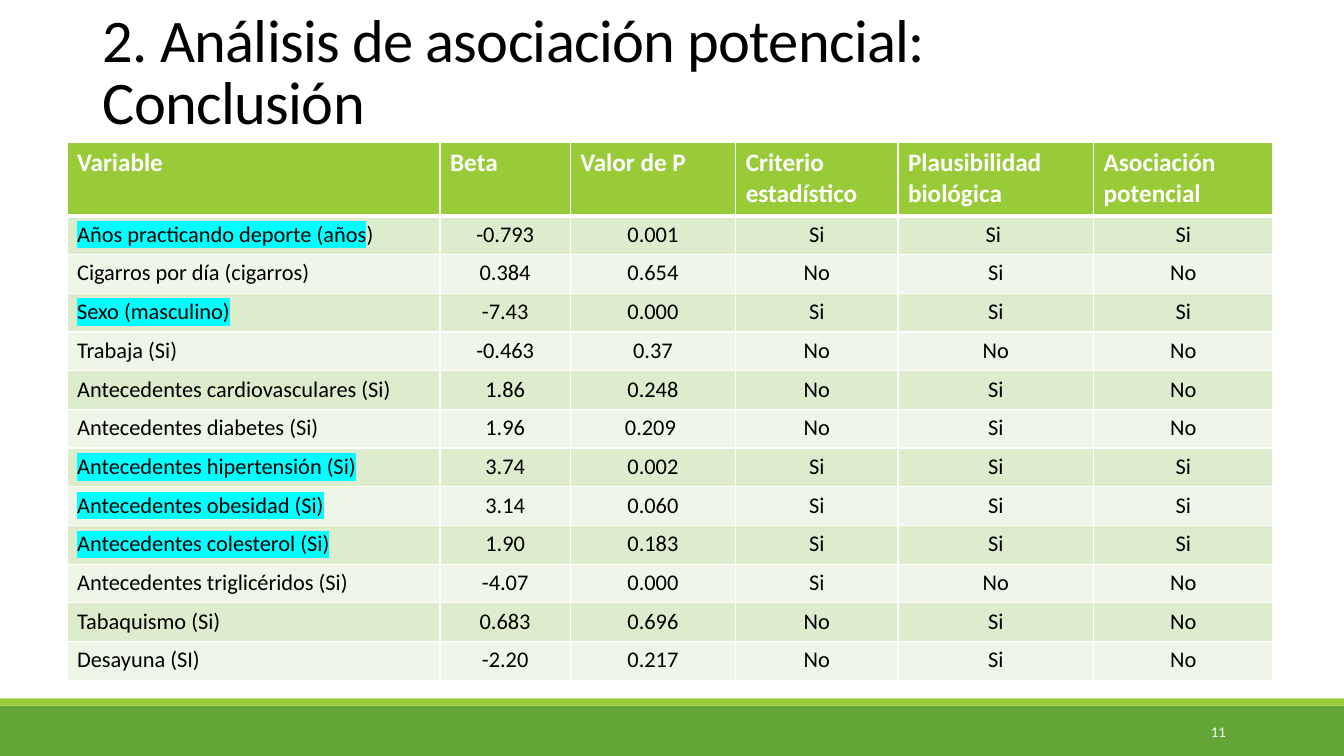
from lxml.etree import SubElement
from pptx import Presentation
from pptx.dml.color import RGBColor
from pptx.enum.shapes import MSO_SHAPE
from pptx.enum.text import MSO_ANCHOR, PP_ALIGN
from pptx.oxml import parse_xml
from pptx.oxml.ns import nsdecls, qn
from pptx.util import Cm, Pt

BLACK = RGBColor(0x00, 0x00, 0x00)
WHITE = RGBColor(0xFF, 0xFF, 0xFF)
DARK_GREEN = RGBColor(0x63, 0xA5, 0x37)
LIME = RGBColor(0x99, 0xCB, 0x38)
BAND_DARK = RGBColor(0xDE, 0xEC, 0xCE)
BAND_LIGHT = RGBColor(0xEF, 0xF6, 0xE8)
CYAN = RGBColor(0x00, 0xFF, 0xFF)

FONT = "Calibri"
SLIDE_WIDTH, SLIDE_HEIGHT = 33.87, 19.05
COLUMN_WIDTHS = [9.4, 3.28, 4.17, 4.09, 4.93, 4.52]
HEADER_HEIGHT, ROW_HEIGHT = 1.85, 0.975

HEADINGS = ["Variable", "Beta", "Valor de P", "Criterio estadístico",
            "Plausibilidad biológica", "Asociación potencial"]
VARIABLES = [
    ("Años practicando deporte (años|)", "-0.793", "0.001", "Si", "Si ", "Si"),
    ("Cigarros por día (cigarros)", "0.384", "0.654", "No", "Si", "No"),
    ("Sexo (masculino)", "-7.43", "0.000", "Si", "Si", "Si"),
    ("Trabaja (Si)", "-0.463", "0.37", "No", "No", "No"),
    ("Antecedentes cardiovasculares (Si)", "1.86", "0.248", "No", "Si", "No"),
    ("Antecedentes diabetes (Si)", "1.96", "0.209 ", "No", "Si", "No"),
    ("Antecedentes hipertensión (Si)", "3.74", "0.002", "Si", "Si", "Si"),
    ("Antecedentes obesidad (Si)", "3.14", "0.060", "Si", "Si", "Si"),
    ("Antecedentes colesterol (Si)", "1.90", "0.183", "Si", "Si", "Si"),
    ("Antecedentes triglicéridos (Si)", "-4.07", "0.000", "Si", "No", "No"),
    ("Tabaquismo (Si)", "0.683", "0.696", "No", "Si", "No"),
    ("Desayuna (SI)", "-2.20", "0.217", "No", "Si", "No"),
]


def write(paragraph, text, size=16, color=BLACK, bold=False,
          align=PP_ALIGN.LEFT, highlight=None, spacing=None):
    paragraph.alignment = align
    run = paragraph.add_run()
    run.text = text
    run.font.name = FONT
    run.font.size = Pt(size)
    run.font.bold = bold
    run.font.color.rgb = color
    properties = run.font._element
    if spacing is not None:
        properties.set("spc", str(int(spacing * 100)))
    if highlight is not None:
        properties.find(qn("a:solidFill")).addnext(parse_xml(
            f'<a:highlight {nsdecls("a")}><a:srgbClr val="{highlight}"/></a:highlight>'))


def add_bar(slide, top, height, color):
    bar = slide.shapes.add_shape(
        MSO_SHAPE.RECTANGLE, 0, Cm(top), Cm(SLIDE_WIDTH), Cm(height))
    bar.shadow.inherit = False
    bar.fill.solid()
    bar.fill.fore_color.rgb = color
    bar.line.fill.background()


def add_title(slide, text):
    title = slide.shapes.title
    title.left, title.top, title.width, title.height = (
        Cm(2.34), Cm(0.91), Cm(27.94), Cm(2.67))
    frame = title.text_frame
    frame.word_wrap = True
    frame.vertical_anchor = MSO_ANCHOR.BOTTOM
    frame.margin_right = Cm(1)
    heading = frame.paragraphs[0]
    heading.line_spacing = 0.85
    write(heading, text, size=43.2, spacing=-0.5)


def add_page_number(slide, number):
    frame = slide.shapes.add_textbox(
        Cm(27.51), Cm(17.93), Cm(3.63), Cm(1.02)).text_frame
    frame.word_wrap = True
    frame.vertical_anchor = MSO_ANCHOR.MIDDLE
    write(frame.paragraphs[0], number, size=10.5, color=WHITE,
          align=PP_ALIGN.RIGHT)


def style_cell(cell, fill, top=1, bottom=1):
    properties = cell._tc.get_or_add_tcPr()
    for side, width in (("L", 1), ("R", 1), ("T", top), ("B", bottom)):
        border = SubElement(properties, qn(f"a:ln{side}"), w=str(Pt(width)))
        color = SubElement(border, qn("a:solidFill"))
        SubElement(color, qn("a:srgbClr"), val=str(WHITE))
    cell.fill.solid()
    cell.fill.fore_color.rgb = fill


def fill_header(table):
    for column, heading in enumerate(HEADINGS):
        cell = table.cell(0, column)
        style_cell(cell, LIME, bottom=3)
        write(cell.text_frame.paragraphs[0], heading, size=18, color=WHITE,
              bold=True)


def fill_variable(table, row, variable):
    label, *results = variable
    marked, _, unmarked = label.partition("|")
    fill = BAND_DARK if row % 2 else BAND_LIGHT
    for column in range(len(HEADINGS)):
        style_cell(table.cell(row, column), fill, top=3 if row == 1 else 1)
    name = table.cell(row, 0).text_frame.paragraphs[0]
    write(name, marked, highlight=CYAN if results[-1] == "Si" else None)
    if unmarked:
        write(name, unmarked)
    for column, result in enumerate(results, start=1):
        write(table.cell(row, column).text_frame.paragraphs[0], result,
              align=PP_ALIGN.CENTER)


def add_association_table(slide):
    height = HEADER_HEIGHT + ROW_HEIGHT * len(VARIABLES)
    table = slide.shapes.add_table(
        len(VARIABLES) + 1, len(HEADINGS), Cm(1.69), Cm(3.59),
        Cm(sum(COLUMN_WIDTHS)), Cm(height)).table
    for column, width in zip(table.columns, COLUMN_WIDTHS):
        column.width = Cm(width)
    for index, row in enumerate(table.rows):
        row.height = Cm(ROW_HEIGHT if index else HEADER_HEIGHT)
    fill_header(table)
    for row, variable in enumerate(VARIABLES, start=1):
        fill_variable(table, row, variable)


def main():
    presentation = Presentation()
    presentation.slide_width = Cm(SLIDE_WIDTH)
    presentation.slide_height = Cm(SLIDE_HEIGHT)
    slide = presentation.slides.add_slide(presentation.slide_layouts[5])
    add_bar(slide, 17.78, 1.27, DARK_GREEN)
    add_bar(slide, 17.6, 0.18, LIME)
    add_title(slide, "2. Análisis de asociación potencial: Conclusión")
    add_association_table(slide)
    add_page_number(slide, "11")
    presentation.save("out.pptx")


if __name__ == "__main__":
    main()
